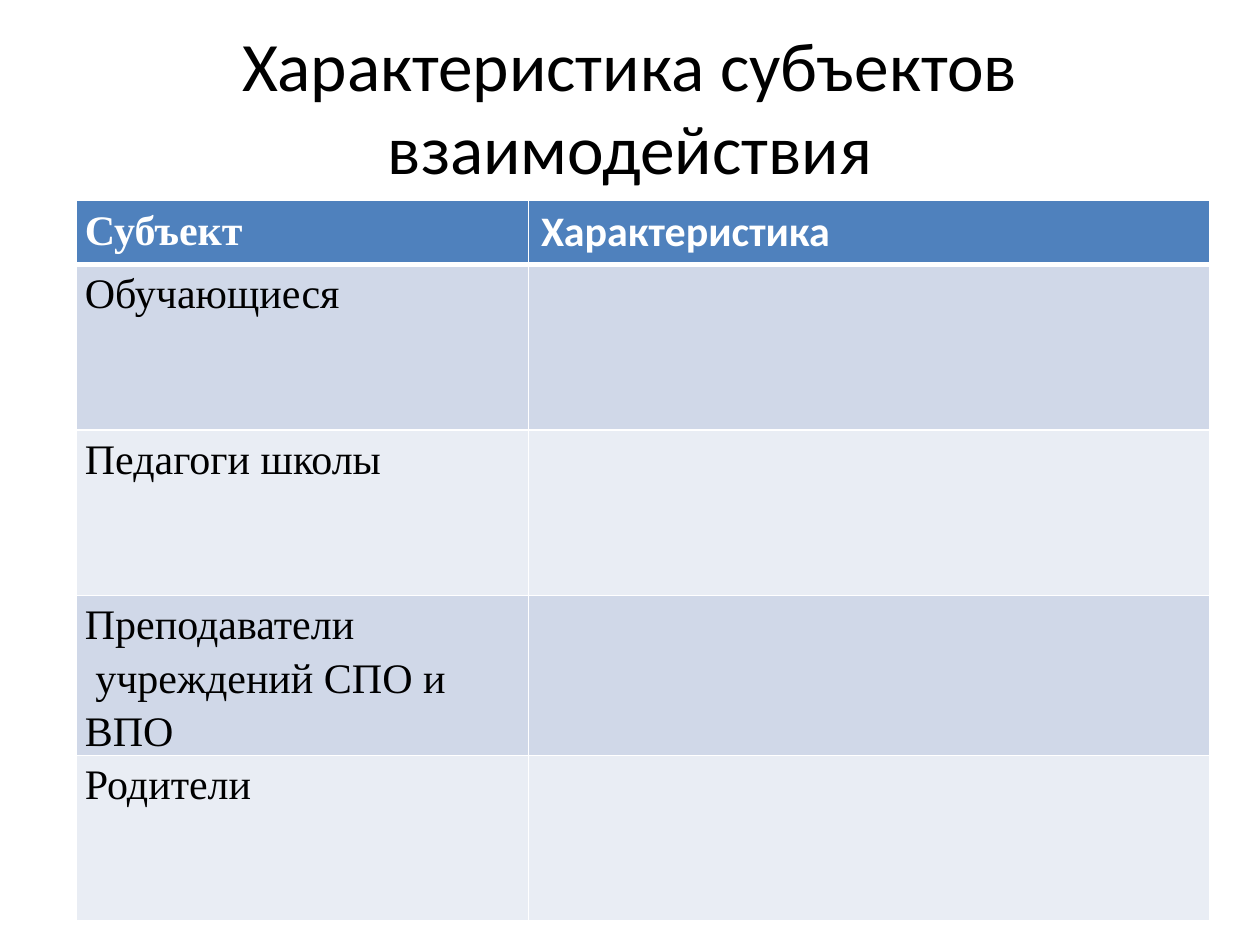
import pptx
import pptx.util
import pptx.dml.color
import pptx.enum.text
import pptx.oxml
import pptx.oxml.ns

Pt = pptx.util.Pt
RGB = pptx.dml.color.RGBColor.from_string
COLORS = {"header": "4F81BD", "odd": "D0D8E8", "even": "E9EDF4",
          "text": "000000", "white": "FFFFFF"}
SUBJECTS = ["Субъект", "Обучающиеся", "Педагоги школы",
            "Преподаватели\n учреждений СПО и ВПО", "Родители"]
ROW_HEIGHTS = [36, 94.5, 94.5, 91.5, 94.5]
COLUMN_WIDTHS = [258.5, 389.5]


def add_border(cell, position, side, width):
    line = pptx.oxml.parse_xml(
        f'<a:{side} {pptx.oxml.ns.nsdecls("a")} w="{Pt(width)}">'
        f'<a:solidFill><a:srgbClr val="{COLORS["white"]}"/></a:solidFill></a:{side}>')
    cell._tc.get_or_add_tcPr().insert(position, line)


def write(cell, text, font_name, color, bold):
    cell.text = text
    for paragraph in cell.text_frame.paragraphs:
        paragraph.font.name = font_name
        paragraph.font.size = Pt(24)
        paragraph.font.bold = bold
        paragraph.font.color.rgb = RGB(COLORS[color])


prs = pptx.Presentation()
prs.slide_width, prs.slide_height = Pt(720), Pt(540)
slide = prs.slides.add_slide(prs.slide_layouts[5])

title = slide.shapes.title
title.left, title.top, title.width, title.height = Pt(36), Pt(21.6), Pt(648), Pt(76.8)
title.text = "Характеристика субъектов взаимодействия"
title_frame = title.text_frame
title_frame.auto_size = pptx.enum.text.MSO_AUTO_SIZE.NONE
title_frame.vertical_anchor = pptx.enum.text.MSO_ANCHOR.MIDDLE
title_frame.margin_top = title_frame.margin_bottom = 0
heading = title_frame.paragraphs[0]
heading.alignment = pptx.enum.text.PP_ALIGN.CENTER
heading.font.name = "Calibri"
heading.font.size = Pt(39.6)
heading.font.color.rgb = RGB(COLORS["text"])

subjects = slide.shapes.add_table(
    len(ROW_HEIGHTS), len(COLUMN_WIDTHS), Pt(43.5), Pt(114.7),
    Pt(sum(COLUMN_WIDTHS)), Pt(sum(ROW_HEIGHTS))).table
for column, width in zip(subjects.columns, COLUMN_WIDTHS):
    column.width = Pt(width)

for index, (row, height) in enumerate(zip(subjects.rows, ROW_HEIGHTS)):
    row.height = Pt(height)
    band = "header" if index == 0 else "odd" if index % 2 else "even"
    top = 3 if index == 1 else 1
    bottom = 3 if index == 0 else 1
    for cell in row.cells:
        cell.fill.solid()
        cell.fill.fore_color.rgb = RGB(COLORS[band])
        borders = [("lnL", 1), ("lnR", 1), ("lnT", top), ("lnB", bottom)]
        for position, (side, width) in enumerate(borders):
            add_border(cell, position, side, width)

    subject = row.cells[0]
    subject.margin_left = subject.margin_right = Pt(5)
    subject.margin_top = subject.margin_bottom = 0
    write(subject, SUBJECTS[index], "Times New Roman",
          "text" if index else "white", index == 0)
    for paragraph in subject.text_frame.paragraphs:
        paragraph.line_spacing = 1.15

write(subjects.cell(0, 1), "Характеристика", "Calibri", "white", True)

prs.save("out.pptx")
